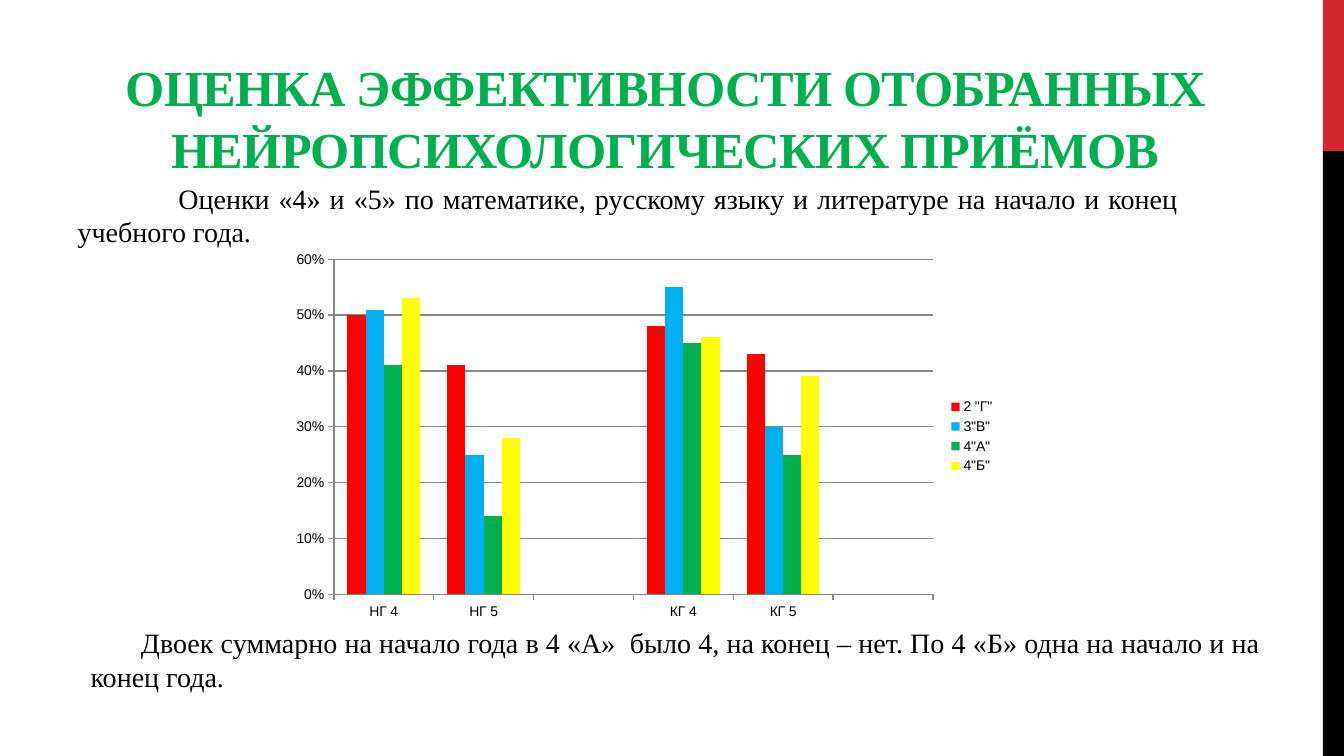
from dataclasses import dataclass

from pptx import Presentation
from pptx import util as u
from pptx.chart import data as chart_data
from pptx.dml import color
from pptx.enum import chart as ch, shapes, text
from lxml import etree


@dataclass(frozen=True)
class Theme:
    ink: str = "000000"
    accent: str = "D1282E"
    heading: str = "00B050"
    gridline: str = "868686"
    classes: tuple = ("FF0000", "00B0F0", "00B050", "FFFF00")
    serif: str = "Times New Roman"
    sans: str = "Arial"
    heading_size: float = 36
    body_size: float = 20
    chart_size: float = 10
    tracking: int = -60


def rgb(value):
    return color.RGBColor.from_string(value)


class SlideBuilder:
    """Places elements by percent of the slide's width and height."""

    def __init__(self, deck, theme):
        self.deck, self.theme = deck, theme
        self.slide = deck.slides.add_slide(deck.slide_layouts[6])

    def area(self, left, top, width, height):
        across, down = self.deck.slide_width, self.deck.slide_height
        return [u.Emu(round(share * full / 100)) for share, full in
                zip((left, top, width, height), (across, down, across, down))]

    def band(self, area, fill):
        band = self.slide.shapes.add_shape(shapes.MSO_SHAPE.RECTANGLE, *self.area(*area))
        band.shadow.inherit = False
        band.fill.solid()
        band.fill.fore_color.rgb = rgb(fill)
        band.line.fill.background()

    def words(self, area, content, size, ink, align):
        frame = self.slide.shapes.add_textbox(*self.area(*area)).text_frame
        frame.word_wrap = True
        frame.text = content
        paragraph = frame.paragraphs[0]
        paragraph.alignment = align
        font = paragraph.runs[0].font
        font.name, font.size = self.theme.serif, u.Pt(size)
        font.color.rgb = rgb(ink)
        return frame

    def heading(self, area, content):
        theme = self.theme
        frame = self.words(area, content, theme.heading_size, theme.heading,
                           text.PP_ALIGN.CENTER)
        frame.vertical_anchor = text.MSO_ANCHOR.MIDDLE
        paragraph = frame.paragraphs[0]
        paragraph.line_spacing = 1.03
        run = paragraph.runs[0]
        run.font.bold = True
        run._r.get_or_add_rPr().set("spc", str(theme.tracking))

    def body(self, area, content, indent):
        frame = self.words(area, content, self.theme.body_size, self.theme.ink,
                           text.PP_ALIGN.JUSTIFY)
        # First-line indent
        properties = frame.paragraphs[0]._p.get_or_add_pPr()
        properties.set("marL", "0")
        properties.set("indent", str(u.Inches(indent)))

    def columns(self, area, categories, series, plot_share):
        theme = self.theme
        grades = chart_data.CategoryChartData(number_format="0%")
        grades.categories = categories
        for name, values in series.items():
            grades.add_series(name, values)
        chart = self.slide.shapes.add_chart(
            ch.XL_CHART_TYPE.COLUMN_CLUSTERED, *self.area(*area), grades).chart
        chart.has_title = False
        chart.font.name, chart.font.size = theme.sans, u.Pt(theme.chart_size)
        chart.font.color.rgb = rgb(theme.ink)
        chart.has_legend = True
        chart.legend.position = ch.XL_LEGEND_POSITION.RIGHT
        chart.legend.include_in_layout = False

        # Bars
        plot = chart.plots[0]
        plot.gap_width, plot.overlap, plot.vary_by_categories = 150, 0, False
        for bars, fill in zip(plot.series, theme.classes):
            bars.format.fill.solid()
            bars.format.fill.fore_color.rgb = rgb(fill)

        # Axes
        scale = chart.value_axis
        scale.minimum_scale, scale.maximum_scale, scale.major_unit = 0, 0.6, 0.1
        scale.tick_labels.number_format = "0%"
        scale.tick_labels.number_format_is_linked = False
        scale.has_major_gridlines = True
        for axis in (scale, chart.category_axis):
            axis.major_tick_mark = ch.XL_TICK_MARK.OUTSIDE
        for ruled in (scale, chart.category_axis, scale.major_gridlines):
            ruled.format.line.color.rgb = rgb(theme.gridline)
            ruled.format.line.width = u.Pt(1)
        self.place_plot(chart, plot_share)

    @staticmethod
    def place_plot(chart, plot_share):
        plot_area = chart._chartSpace.chart.plotArea
        namespace = etree.QName(plot_area).namespace
        for old in plot_area.findall(f"{{{namespace}}}layout"):
            plot_area.remove(old)
        layout = etree.Element(f"{{{namespace}}}layout")
        manual = etree.SubElement(layout, f"{{{namespace}}}manualLayout")
        settings = [("layoutTarget", "inner"), ("xMode", "edge"), ("yMode", "edge"),
                    *zip("xywh", plot_share)]
        for tag, value in settings:
            etree.SubElement(manual, f"{{{namespace}}}{tag}").set("val", str(value))
        plot_area.insert(0, layout)


def main():
    deck = Presentation()
    deck.slide_width, deck.slide_height = u.Inches(13.33), u.Inches(7.5)
    theme = Theme()
    page = SlideBuilder(deck, theme)

    # Side stripe
    page.band((98.42, 0, 1.58, 20), theme.accent)
    page.band((98.42, 20, 1.58, 80), theme.ink)

    # Heading and introduction
    page.heading((5.03, 7.4, 88.97, 16),
                 "ОЦЕНКА ЭФФЕКТИВНОСТИ ОТОБРАННЫХ НЕЙРОПСИХОЛОГИЧЕСКИХ ПРИЁМОВ")
    page.body((5.03, 23.33, 83.35, 10),
              "Оценки «4» и «5» по математике, русскому языку и литературе "
              "на начало и конец учебного года.", indent=1)

    # Share of good marks by class
    page.columns((21.08, 32.27, 53.71, 50.93),
                 ["НГ 4", "НГ 5", "", "КГ 4", "КГ 5", ""],
                 {'2 "Г"': (0.5, 0.41, None, 0.48, 0.43, None),
                  '3"В"': (0.51, 0.25, None, 0.55, 0.3, None),
                  '4"А"': (0.41, 0.14, None, 0.45, 0.25, None),
                  '4"Б"': (0.53, 0.28, None, 0.46, 0.39, None)},
                 plot_share=(0.07, 0.04, 0.83, 0.87))

    # Conclusion
    page.body((6, 82.1, 88.52, 10.27),
              "Двоек суммарно на начало года в 4 «А»  было 4, на конец – нет. "
              "По 4 «Б» одна на начало и на конец года.", indent=0.5)

    deck.save("out.pptx")


if __name__ == "__main__":
    main()
